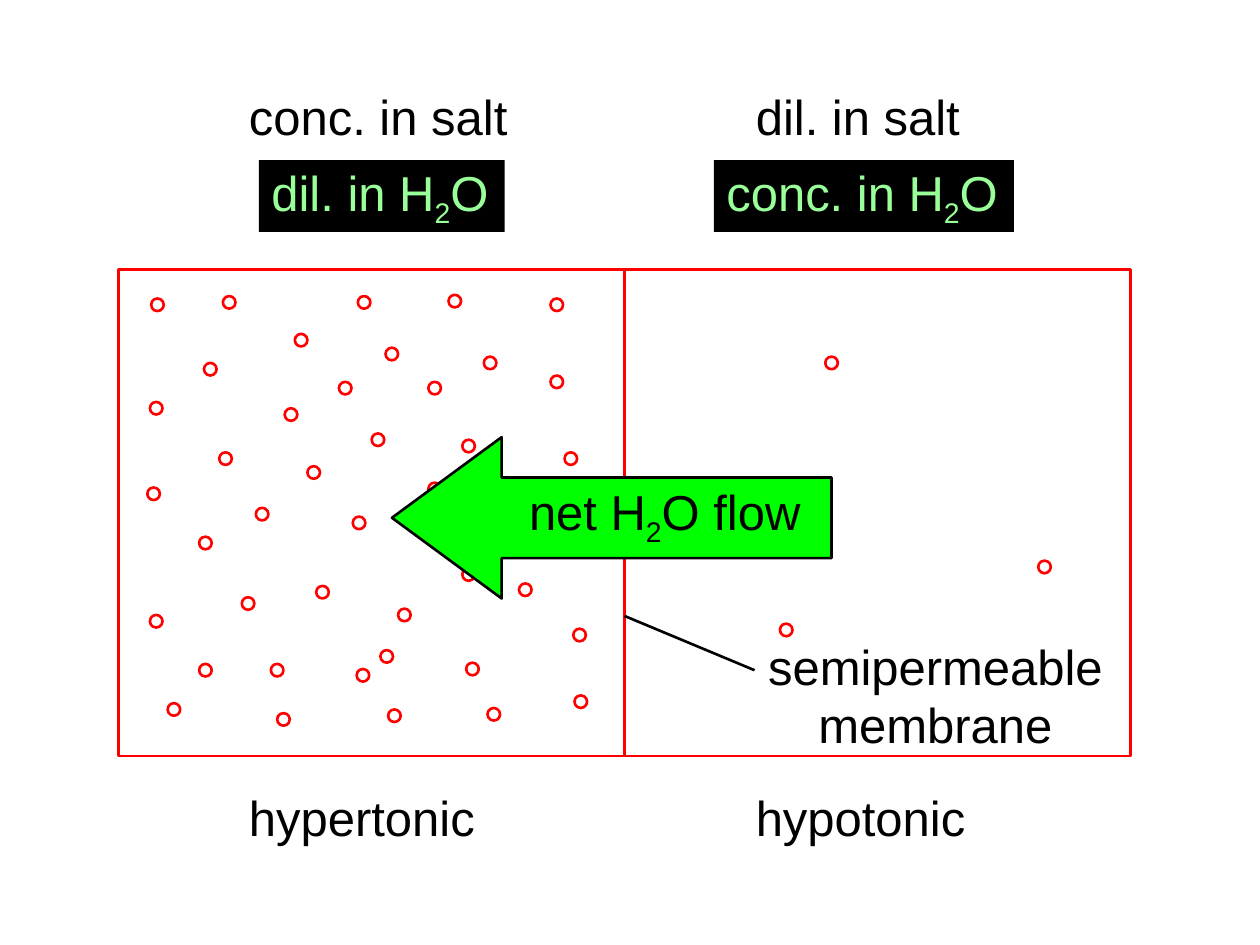
from lxml import etree
from pptx import Presentation, util as u
from pptx.dml.color import RGBColor
from pptx.enum import shapes, text
from pptx.oxml.ns import qn

COLORS = {"black": "000000", "salt": "FF0000", "water": "99FF99", "flow": "00FF00"}
TEXT_SIZE = 28
LINE_WIDTH = 1.5
LABEL_HEIGHT = 41

CHAMBER_LEFT, CHAMBER_TOP = 67.9, 154
CHAMBER_WIDTH, CHAMBER_HEIGHT = 289, 278
MEMBRANE_X = CHAMBER_LEFT + CHAMBER_WIDTH

ION_SIZE = 7.2
CONCENTRATED_IONS = [
    (113.8, 379.4), (113.8, 306.7), (125.3, 258.5), (264.2, 324.7), (264.2, 251.3),
    (276.5, 203.8), (201.6, 295.2), (212.4, 247.7), (290.2, 286.6), (296.6, 333.4),
    (227.5, 347.8), (266.4, 378.7), (203.8, 382.3), (180.7, 334.8), (154.8, 379.4),
    (146.2, 290.2), (162.7, 233.3), (116.6, 207.4), (168.5, 190.8), (220.3, 198.7),
    (256.3, 168.5), (314.6, 170.6), (314.6, 214.6), (322.6, 258.5), (326.2, 301.7),
    (327.6, 359.3), (328.3, 397.4), (278.6, 404.6), (221.8, 405.4), (217.4, 371.5),
    (158.4, 407.5), (95.8, 401.8), (85.7, 351.4), (138.2, 341.3), (84.2, 278.6),
    (85.7, 229.7), (86.4, 170.6), (127.4, 169.2), (204.5, 169.2), (193.7, 218.2),
    (244.8, 218.2), (244.8, 275.8), (175.7, 266.4),
]
DILUTE_IONS = [(471.6, 203.8), (445.7, 356.4), (593.3, 320.4)]


def rgb(name):
    return RGBColor.from_string(COLORS[name])


def write_text(shape, content, color="black", size=TEXT_SIZE, font="Arial",
               align=text.PP_ALIGN.LEFT):
    """Write one paragraph per line; a part between underscores is a subscript."""
    frame = shape.text_frame
    frame.word_wrap = False
    frame.auto_size = text.MSO_AUTO_SIZE.SHAPE_TO_FIT_TEXT
    frame.vertical_anchor = text.MSO_ANCHOR.MIDDLE
    for index, line in enumerate(content.split("\n")):
        paragraph = frame.add_paragraph() if index else frame.paragraphs[0]
        paragraph.alignment = align
        for position, part in enumerate(line.split("_")):
            run = paragraph.add_run()
            run.text = part
            run.font.name = font
            run.font.size = u.Pt(size)
            run.font.color.rgb = rgb(color)
            if position % 2:
                run.font._element.set("baseline", "-25000")


class Diagram:
    """Draws on the slide, or on the group that was started last."""

    def __init__(self, slide):
        self.slide = slide
        self.target = slide.shapes

    def start_group(self):
        self.target = self.slide.shapes.add_group_shape().shapes

    def shape(self, kind, left, top, width, height, fill=None, line=None):
        shape = self.target.add_shape(kind, *map(u.Pt, (left, top, width, height)))
        shape.shadow.inherit = False
        if fill:
            shape.fill.solid()
            shape.fill.fore_color.rgb = rgb(fill)
        else:
            shape.fill.background()
        if line:
            shape.line.color.rgb = rgb(line)
            shape.line.width = u.Pt(LINE_WIDTH)
        else:
            shape.line.fill.background()
        return shape

    def label(self, content, left, top, width, height=LABEL_HEIGHT, **text_format):
        box = self.target.add_textbox(*map(u.Pt, (left, top, width, height)))
        write_text(box, content, **text_format)

    def water_label(self, content, left, top, width):
        box = self.shape(shapes.MSO_SHAPE.RECTANGLE, left, top, width, LABEL_HEIGHT,
                         fill="black")
        write_text(box, content, color="water")

    def chamber(self, left):
        self.shape(shapes.MSO_SHAPE.RECTANGLE, left, CHAMBER_TOP,
                   CHAMBER_WIDTH, CHAMBER_HEIGHT, line="salt")

    def ion(self, left, top):
        self.shape(shapes.MSO_SHAPE.OVAL, left, top, ION_SIZE, ION_SIZE, line="salt")

    def flow_arrow(self, left, top, width, height):
        arrow = self.shape(shapes.MSO_SHAPE.LEFT_ARROW, left, top, width, height,
                           fill="flow", line="black")
        arrow.adjustments[0] = 0.5
        arrow.adjustments[1] = 0.68

    def pointer(self, start_x, start_y, end_x, end_y):
        line = self.target.add_connector(
            shapes.MSO_CONNECTOR.STRAIGHT, *map(u.Pt, (start_x, start_y, end_x, end_y)))
        line.line.color.rgb = rgb("black")
        line.line.width = u.Pt(LINE_WIDTH)
        etree.SubElement(line._element.spPr, qn("a:effectLst"))


def main():
    presentation = Presentation()
    presentation.slide_width, presentation.slide_height = u.Pt(720), u.Pt(540)
    diagram = Diagram(presentation.slides.add_slide(presentation.slide_layouts[6]))

    left_column, right_column = 135.2, 424.8
    diagram.label("hypertonic", left_column, 446.4, 144)
    diagram.label("hypotonic", right_column, 446.4, 134.6)
    diagram.water_label("dil. in H_2_O", 148, 91.6, 140.4)
    diagram.water_label("conc. in H_2_O", 408, 91.6, 171.4)
    diagram.label("conc. in salt", left_column, 45.6, 162.7)
    diagram.label("dil. in salt", right_column, 45.6, 131)

    diagram.start_group()
    for left in (CHAMBER_LEFT, MEMBRANE_X):
        diagram.chamber(left)
    for left, top in CONCENTRATED_IONS + DILUTE_IONS:
        diagram.ion(left, top)

    diagram.start_group()
    diagram.flow_arrow(224, 249.8, 251.2, 92.2)
    diagram.label("net H_2_O flow", 295.2, 273.6, 171.4)

    diagram.start_group()
    diagram.label("semipermeable\nmembrane", 431.2, 360, 206.6, 74.2,
                  align=text.PP_ALIGN.CENTER)
    diagram.pointer(431.2, 383, MEMBRANE_X, 352)

    presentation.save("out.pptx")


if __name__ == "__main__":
    main()
